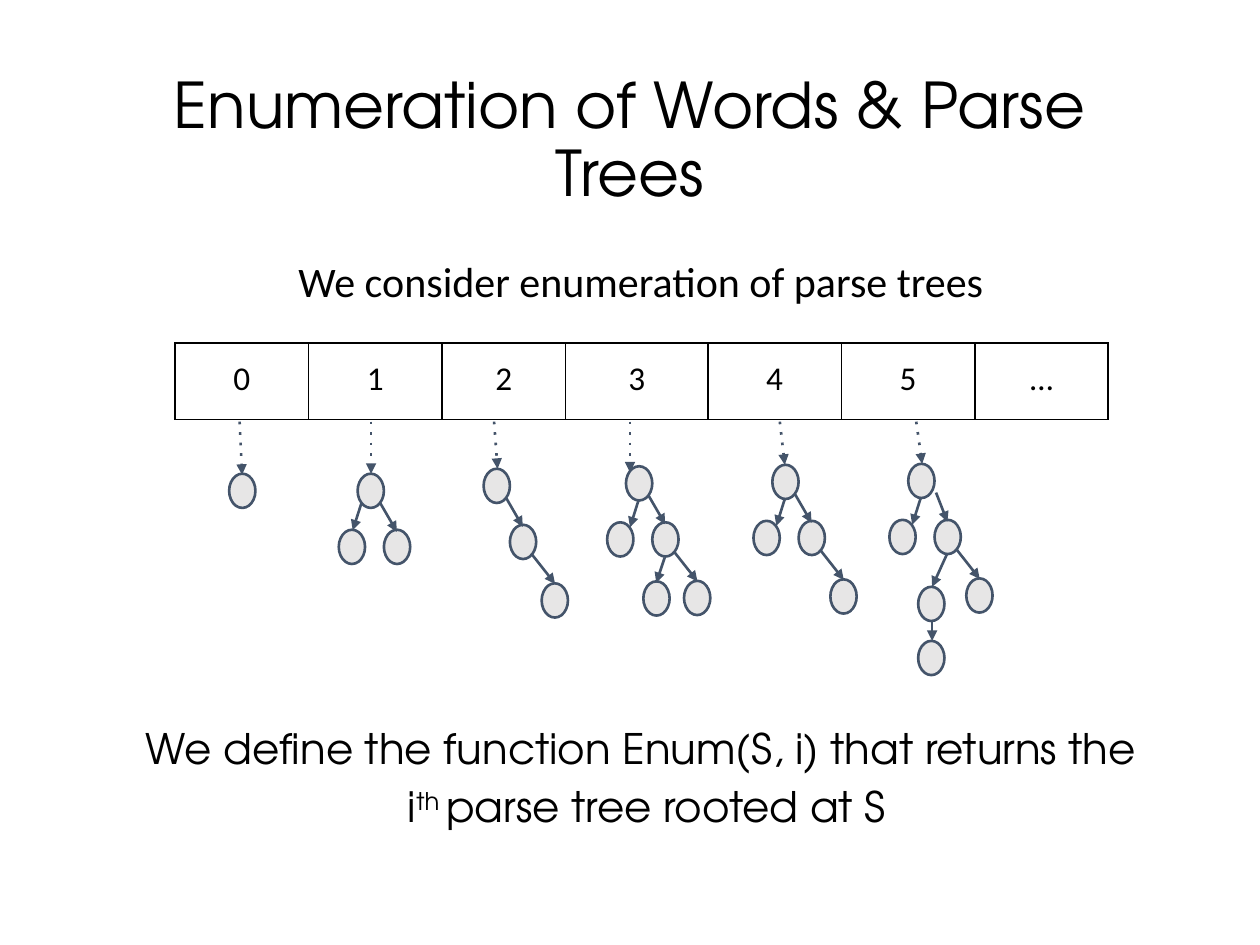
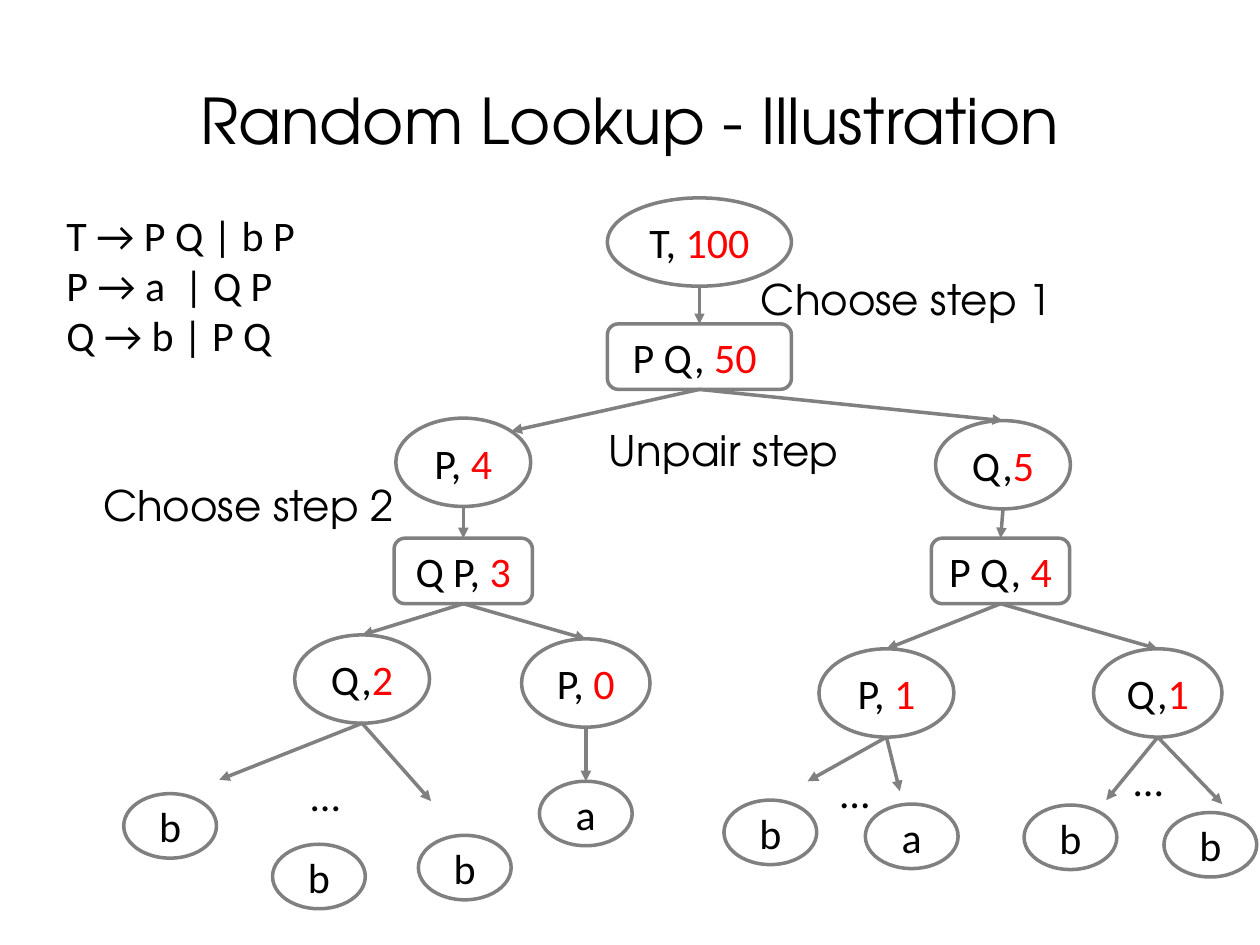
import lxml.etree
import pptx
import pptx.dml.color
import pptx.enum.shapes
import pptx.enum.text
import pptx.oxml.ns
import pptx.util

Cm = pptx.util.Cm
Pt = pptx.util.Pt
Shape = pptx.enum.shapes.MSO_SHAPE
Align = pptx.enum.text.PP_ALIGN
Anchor = pptx.enum.text.MSO_ANCHOR
AutoSize = pptx.enum.text.MSO_AUTO_SIZE

HEADING, PLAIN = "TeX Gyre Adventor", "Calibri"
BLACK, RED, GRAY, SLATE, SILVER = "000000", "FF0000", "808080", "44546A", "E7E6E6"

PARSE_NODE = (0.53, 0.69)
STEM_TOP = 8.5
BRANCHES = {
    "left": ((-0.38, 1.13), (0.25, 0.69), (0.08, 1.23)),
    "outer left": ((-0.38, 1.13), (0.08, 0.58), (-0.1, 1.14)),
    "near left": ((-0.18, 1.19), (0.25, 0.71), (0.08, 1.22)),
    "deep left": ((-0.33, 1.35), (0.25, 0.69), (-0.05, 1.35)),
    "right": ((0.53, 1.13), (0.46, 0.6), (0.79, 1.17)),
    "outer right": ((0.53, 1.13), (0.56, 0.58), (0.79, 1.17)),
    "far right": ((0.64, 1.18), (0.43, 0.58), (0.91, 1.19)),
    "down": ((0, 1.09), (0.28, 0.69), (0.28, 1.09)),
}
PARSE_TREES = [
    ((4.62, 9.55), 4.83, (4.88, 9.57), {}),
    ((7.21, 9.55), 7.48, (7.48, 9.55), {"outer left": {}, "right": {}}),
    ((9.75, 9.45), 9.96, (10.03, 9.45), {"right": {"far right": {}}}),
    ((12.62, 9.4), 12.7, (12.7, 9.52),
     {"left": {}, "right": {"near left": {}, "far right": {}}}),
    ((15.57, 9.37), 15.72, (15.82, 9.37), {"left": {}, "right": {"far right": {}}}),
    ((18.31, 9.35), 18.47, (18.59, 9.35),
     {"left": {}, "outer right": {"deep left": {"down": {}}, "far right": {}}}),
]

WIDE, SYMBOL, SLIM, LEAF = (3.71, 1.78), (2.72, 1.78), (2.59, 1.78), (1.87, 1.3)
WIDE_RULE, RULE = (3.71, 1.32), (2.79, 1.32)
LOOKUP_STEPS = {
    "T": (Shape.OVAL, 14.1, 3.99, WIDE, "T, ", "100"),
    "T rule": (Shape.ROUNDED_RECTANGLE, 14.1, 6.53, WIDE_RULE, "P Q, ", "50 "),
    "P4": (Shape.OVAL, 9.34, 8.43, SYMBOL, "P, ", "4"),
    "Q5": (Shape.OVAL, 20.22, 8.48, SYMBOL, "Q,", "5"),
    "P4 rule": (Shape.ROUNDED_RECTANGLE, 9.34, 10.85, RULE, "Q P, ", "3"),
    "Q5 rule": (Shape.ROUNDED_RECTANGLE, 20.17, 10.85, RULE, "P Q, ", "4"),
    "Q2": (Shape.OVAL, 7.3, 12.8, SYMBOL, "Q,", "2"),
    "P0": (Shape.OVAL, 11.81, 12.88, SLIM, "P, ", "0"),
    "P1": (Shape.OVAL, 17.87, 13.08, SYMBOL, "P, ", "1"),
    "Q1": (Shape.OVAL, 23.34, 13.08, SLIM, "Q,", "1"),
    "P0 leaf": (Shape.OVAL, 11.81, 15.75, LEAF, "a", ""),
}
LOOSE_LEAVES = [
    ("b", 3.43, 16), ("b", 6.43, 17.02), ("b", 9.37, 16.84), ("b", 15.53, 16.13),
    ("a", 18.38, 16.21), ("b", 21.58, 16.23), ("b", 24.4, 16.38),
]
LOOKUP_LINKS = [
    ("T rule", "Q5"), ("P4", "P4 rule"), ("Q5", "Q5 rule"), ("P4 rule", "Q2"),
    ("P4 rule", "P0"), ("Q5 rule", "P1"), ("Q5 rule", "Q1"), ("P0", "P0 leaf"),
]
OPEN_LINKS = [
    ("T rule", (10.31, 8.69)),
    ("Q2", (4.42, 15.72)), ("Q2", (8.69, 16.15)),
    ("P1", (16.28, 15.75)), ("P1", (18.14, 15.95)),
    ("Q1", (22.3, 16.13)), ("Q1", (24.64, 16.21)),
]


def color(hex_code):
    return pptx.dml.color.RGBColor.from_string(hex_code)


def add_tag(parent, tag, **attributes):
    return lxml.etree.SubElement(parent, pptx.oxml.ns.qn(tag), attributes)


def shifted(origin, offset):
    return origin[0] + offset[0], origin[1] + offset[1]


class Deck:
    def __init__(self):
        self.presentation = pptx.Presentation()
        self.presentation.slide_width = Cm(25.4)
        self.presentation.slide_height = Cm(19.05)
        self.slide = None

    def style_run(self, run, font, size=24, ink=BLACK):
        run.font.name = font
        run.font.size = Pt(size)
        run.font.color.rgb = color(ink)

    def place(self, part, left, top, width, height):
        part.left, part.top = Cm(left), Cm(top)
        part.width, part.height = Cm(width), Cm(height)

    def new_slide(self, layout, heading, height):
        self.slide = self.presentation.slides.add_slide(
            self.presentation.slide_layouts[layout])
        title = self.slide.shapes.title
        self.place(title, 1.75, 1.02, 21.89, height)
        frame = title.text_frame
        frame.text = heading
        frame.vertical_anchor = Anchor.MIDDLE
        frame.auto_size = AutoSize.NONE
        paragraph = frame.paragraphs[0]
        paragraph.alignment = Align.CENTER
        paragraph.line_spacing = 0.9
        self.style_run(paragraph.runs[0], HEADING, 36)

    def body(self, box, paragraphs):
        statement = self.slide.placeholders[1]
        self.place(statement, *box)
        frame = statement.text_frame
        frame.auto_size = AutoSize.NONE
        for position, (font, gap, pieces) in enumerate(paragraphs):
            paragraph = frame.add_paragraph() if position else frame.paragraphs[0]
            paragraph.alignment = Align.CENTER
            paragraph.line_spacing = 0.9
            paragraph.space_before = Pt(gap)
            properties = paragraph._p.get_or_add_pPr()
            properties.set("marL", "0")
            properties.set("indent", "0")
            add_tag(properties, "a:buNone")
            for text, baseline in pieces:
                run = paragraph.add_run()
                run.text = text
                self.style_run(run, font)
                if baseline:
                    run.font._element.set("baseline", str(baseline))

    def label(self, text, font, left, top, width, height=1.27, wrap=True):
        caption = self.slide.shapes.add_textbox(
            Cm(left), Cm(top), Cm(width), Cm(height))
        frame = caption.text_frame
        frame.text = text
        frame.word_wrap = wrap
        frame.auto_size = AutoSize.SHAPE_TO_FIT_TEXT
        for paragraph in frame.paragraphs:
            self.style_run(paragraph.runs[0], font)

    def outline(self, geometry, left, top, size, line, weight, fill=None):
        node = self.slide.shapes.add_shape(
            geometry, Cm(left), Cm(top), Cm(size[0]), Cm(size[1]))
        node.shadow.inherit = False
        node.line.color.rgb = color(line)
        node.line.width = Pt(weight)
        if fill:
            node.fill.solid()
            node.fill.fore_color.rgb = color(fill)
        else:
            node.fill.background()
        return node

    def step(self, geometry, center, top, size, symbol, index):
        node = self.outline(geometry, center - size[0] / 2, top, size, GRAY, 2)
        frame = node.text_frame
        frame.word_wrap = False
        frame.vertical_anchor = Anchor.MIDDLE
        paragraph = frame.paragraphs[0]
        paragraph.alignment = Align.CENTER
        for text, ink in ((symbol, BLACK), (index, RED)):
            if text:
                run = paragraph.add_run()
                run.text = text
                self.style_run(run, PLAIN, ink=ink)

    def arrow(self, start, end, line, weight, dotted=False):
        link = self.slide.shapes.add_connector(
            pptx.enum.shapes.MSO_CONNECTOR.STRAIGHT,
            Cm(start[0]), Cm(start[1]), Cm(end[0]), Cm(end[1]))
        link.line.color.rgb = color(line)
        link.line.width = Pt(weight)
        stroke = link.line._get_or_add_ln()
        if dotted:
            add_tag(stroke, "a:prstDash", val="dot")
        add_tag(stroke, "a:tailEnd", type="triangle")
        add_tag(link._element.spPr, "a:effectLst")

    def index_row(self, left, top, height, widths, entries):
        row = self.slide.shapes.add_table(
            1, len(entries), Cm(left), Cm(top), Cm(sum(widths)), Cm(height)).table
        row.first_row = row.horz_banding = False
        for column, (width, entry) in enumerate(zip(widths, entries)):
            row.columns[column].width = Cm(width)
            cell = row.cell(0, column)
            cell.text_frame.text = entry
            cell.margin_left = cell.margin_right = Cm(0.25)
            cell.margin_top = cell.margin_bottom = Cm(0.33)
            paragraph = cell.text_frame.paragraphs[0]
            paragraph.alignment = Align.CENTER
            self.style_run(paragraph.runs[0], PLAIN, 19)
            properties = cell._tc.get_or_add_tcPr()
            for side in "LRTB":
                border = add_tag(properties, f"a:ln{side}", w=str(Pt(1)))
                add_tag(add_tag(border, "a:solidFill"), "a:srgbClr", val=BLACK)
            cell.fill.background()

    def parse_tree(self, root, branches):
        self.outline(Shape.OVAL, *root, PARSE_NODE, SLATE, 1.5, SILVER)
        for direction, children in branches.items():
            child, start, end = BRANCHES[direction]
            self.parse_tree(shifted(root, child), children)
            self.arrow(shifted(root, start), shifted(root, end), SLATE, 1.5)


def enumeration_slide(deck):
    deck.new_slide(1, "Enumeration of Words & Parse Trees", 3.68)
    deck.body((1.45, 5.13, 22.94, 13.26), [
        (PLAIN, 0, [("We consider enumeration of parse trees", 0)]),
        (HEADING, 241, [("We define the function Enum(S, i) that returns the", 0)]),
        (HEADING, 7.5, [(" i", 0), ("th ", 30000), ("parse tree rooted at S", 0)]),
    ])
    deck.index_row(3.53, 6.91, 1.55, [2.69, 2.69, 2.49, 2.87, 2.69, 2.69, 2.69],
                   ["0", "1", "2", "3", "4", "5", "…"])
    for root, stem_left, stem_end, branches in PARSE_TREES:
        deck.parse_tree(root, branches)
        deck.arrow((stem_left, STEM_TOP), stem_end, SLATE, 1.5, dotted=True)


def lookup_slide(deck):
    deck.new_slide(5, "Random Lookup - Illustration", 2.97)
    deck.label("T → P Q | b P\nP → a  | Q P\nQ → b | P Q", PLAIN, 1.09, 4.09, 6.38, 3.33)
    tops, bottoms = {}, {}
    for name, (geometry, center, top, size, symbol, index) in LOOKUP_STEPS.items():
        deck.step(geometry, center, top, size, symbol, index)
        tops[name] = (center, top)
        bottoms[name] = (center, top + size[1])
    for symbol, center, top in LOOSE_LEAVES:
        deck.step(Shape.OVAL, center, top, LEAF, symbol, "")
    deck.arrow(bottoms["T"], tops["T rule"], GRAY, 1.25)
    for parent, child in LOOKUP_LINKS:
        deck.arrow(bottoms[parent], tops[child], GRAY, 2)
    for parent, end in OPEN_LINKS:
        deck.arrow(bottoms[parent], end, GRAY, 2)
    for caption, left, top, width in (("Choose step 1", 15.09, 5.38, 6.4),
                                      ("Unpair step", 12.01, 8.43, 5.77),
                                      ("Choose step 2", 1.83, 9.55, 6.4)):
        deck.label(caption, HEADING, left, top, width, wrap=False)
    for left, top, width in ((6.02, 15.39, 2.41), (16.69, 15.32, 1.45), (22.61, 15.09, 1.45)):
        deck.label("…", PLAIN, left, top, width)


def main():
    deck = Deck()
    enumeration_slide(deck)
    lookup_slide(deck)
    deck.presentation.save("out.pptx")


if __name__ == "__main__":
    main()
